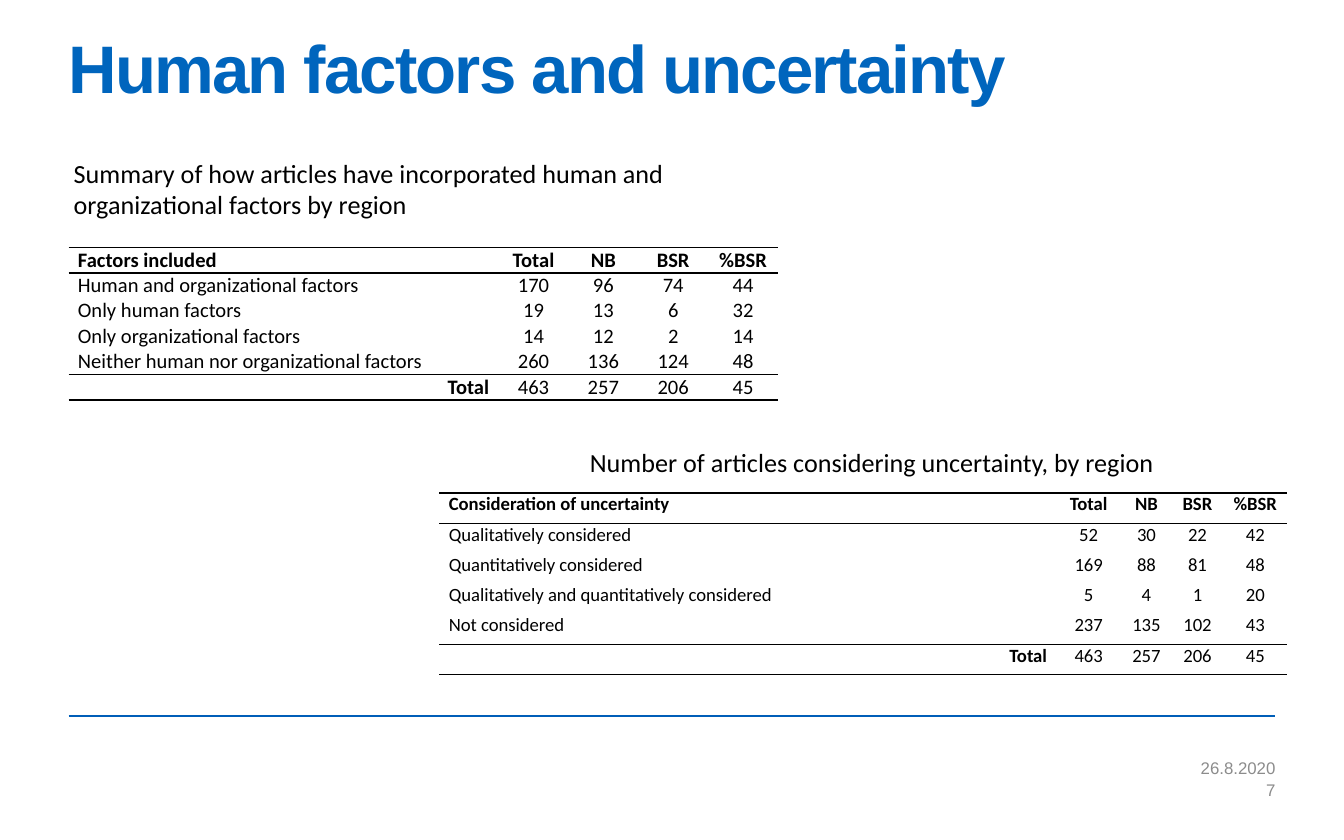
"""Build the slide on human factors and uncertainty."""
from lxml.etree import SubElement
from pptx import Presentation
from pptx.dml.color import RGBColor
from pptx.enum.shapes import MSO_CONNECTOR
from pptx.enum.text import MSO_ANCHOR as ANCHOR, MSO_AUTO_SIZE as AUTO, PP_ALIGN as ALIGN
from pptx.oxml.ns import qn
from pptx.util import Inches, Pt

HEAD = ["Total", "NB", "BSR", "%BSR"]
FACTORS = [
    ["Factors included", *HEAD],
    ["Human and organizational factors", 170, 96, 74, 44],
    ["Only human factors", 19, 13, 6, 32],
    ["Only organizational factors", 14, 12, 2, 14],
    ["Neither human nor organizational factors", 260, 136, 124, 48],
    ["Total", 463, 257, 206, 45],
]
UNCERTAINTY = [
    ["Consideration of uncertainty", *HEAD],
    ["Qualitatively considered", 52, 30, 22, 42],
    ["Quantitatively considered", 169, 88, 81, 48],
    ["Qualitatively and quantitatively considered", 5, 4, 1, 20],
    ["Not considered", 237, 135, 102, 43],
    ["Total", 463, 257, 206, 45],
]


def color(value):
    return RGBColor.from_string(value)


class SlideBuilder:
    title_color, rule_color, ink, muted = "0065BD", "005EB8", "000000", "8C8C8C"
    head_font, body_font = "Arial", "Calibri"

    def __init__(self, prs):
        self.s = prs.slides.add_slide(prs.slide_layouts[5])

    def style(self, p, size, font, ink, bold=False, align=ALIGN.LEFT):
        p.alignment = align
        p.font.size, p.font.name, p.font.bold = Pt(size), font, bold
        p.font.color.rgb = color(ink)

    def title(self, text, x, y, w, h):
        sp = self.s.shapes.title
        sp.left, sp.top, sp.width, sp.height = map(Inches, (x, y, w, h))
        tf = sp.text_frame
        tf.margin_left = tf.margin_right = tf.margin_top = tf.margin_bottom = 0
        tf.vertical_anchor, tf.auto_size, tf.word_wrap = ANCHOR.TOP, AUTO.NONE, True
        p = tf.paragraphs[0]
        r = p.add_run()
        r.text = text
        r.font._element.set("spc", "-100")
        p.line_spacing = 0.85
        self.style(p, 36, self.head_font, self.title_color, True)

    def text(self, text, x, y, w, h):
        sp = self.s.shapes.add_textbox(*map(Inches, (x, y, w, h)))
        tf = sp.text_frame
        tf.word_wrap = True
        tf.text = text
        return tf

    def caption(self, text, x, y, w, h):
        tf = self.text(text, x, y, w, h)
        tf.auto_size = AUTO.SHAPE_TO_FIT_TEXT
        self.style(tf.paragraphs[0], 14, self.body_font, self.ink)

    def footer(self, text, x, y, w, h):
        tf = self.text(text, x, y, w, h)
        tf.margin_right, tf.vertical_anchor = 0, ANCHOR.MIDDLE
        self.style(tf.paragraphs[0], 9, self.head_font, self.muted, align=ALIGN.RIGHT)

    def rule(self, x1, x2, y):
        c = self.s.shapes.add_connector(MSO_CONNECTOR.STRAIGHT, *map(Inches, (x1, y, x2, y)))
        c.line.color.rgb, c.line.width = color(self.rule_color), Pt(1)
        SubElement(c._element.spPr, qn("a:effectLst"))

    def borders(self, cell, top, bottom):
        tcPr = cell._tc.get_or_add_tcPr()
        for side, shown in (("L", False), ("R", False), ("T", top), ("B", bottom)):
            ln = SubElement(tcPr, qn(f"a:ln{side}"), w=str(Pt(1)))
            if shown:
                SubElement(SubElement(ln, qn("a:solidFill")), qn("a:srgbClr"), val=self.ink)
            else:
                SubElement(ln, qn("a:noFill"))

    def table(self, rows, x, y, widths, row_height, size):
        last = len(rows) - 1
        area = map(Inches, (x, y, sum(widths), row_height * len(rows)))
        table = self.s.shapes.add_table(len(rows), len(widths), *area).table
        table.first_row = table.horz_banding = False
        for column, width in zip(table.columns, widths):
            column.width = Inches(width)
        for i, row in enumerate(rows):
            table.rows[i].height = Inches(row_height)
            for j, value in enumerate(row):
                cell = table.cell(i, j)
                cell.text = str(value)
                cell.margin_left = cell.margin_right = Inches(0.07)
                cell.margin_top = cell.margin_bottom = 0
                self.borders(cell, i in (0, 1, last), i in (0, last - 1, last))
                cell.fill.background()
                label_align = ALIGN.RIGHT if i == last else ALIGN.LEFT
                self.style(cell.text_frame.paragraphs[0], size, self.body_font, self.ink,
                           i == 0 or (i == last and j == 0),
                           ALIGN.CENTER if j else label_align)


def main():
    prs = Presentation()
    prs.slide_width, prs.slide_height = Inches(10), Inches(6.25)
    b = SlideBuilder(prs)
    b.rule(0.51, 9.49, 5.33)
    b.title("Human factors and uncertainty", 0.51, 0.29, 8.98, 1.09)
    b.table(FACTORS, 0.51, 1.84, [3.2] + [0.52] * 4, 0.18, 11)
    b.footer("26.8.2020", 5.53, 5.63, 3.96, 0.17)
    b.footer("7", 5.53, 5.8, 3.96, 0.15)
    b.caption("Summary of how articles have incorporated human and "
              "organizational factors by region", 0.45, 1.12, 5, 0.57)
    b.table(UNCERTAINTY, 3.27, 3.67, [4.59, 0.48, 0.38, 0.38, 0.48], 0.225, 10)
    b.caption("Number of articles considering uncertainty, by region", 4.29, 3.27, 5, 0.34)
    prs.save("out.pptx")


if __name__ == "__main__":
    main()
